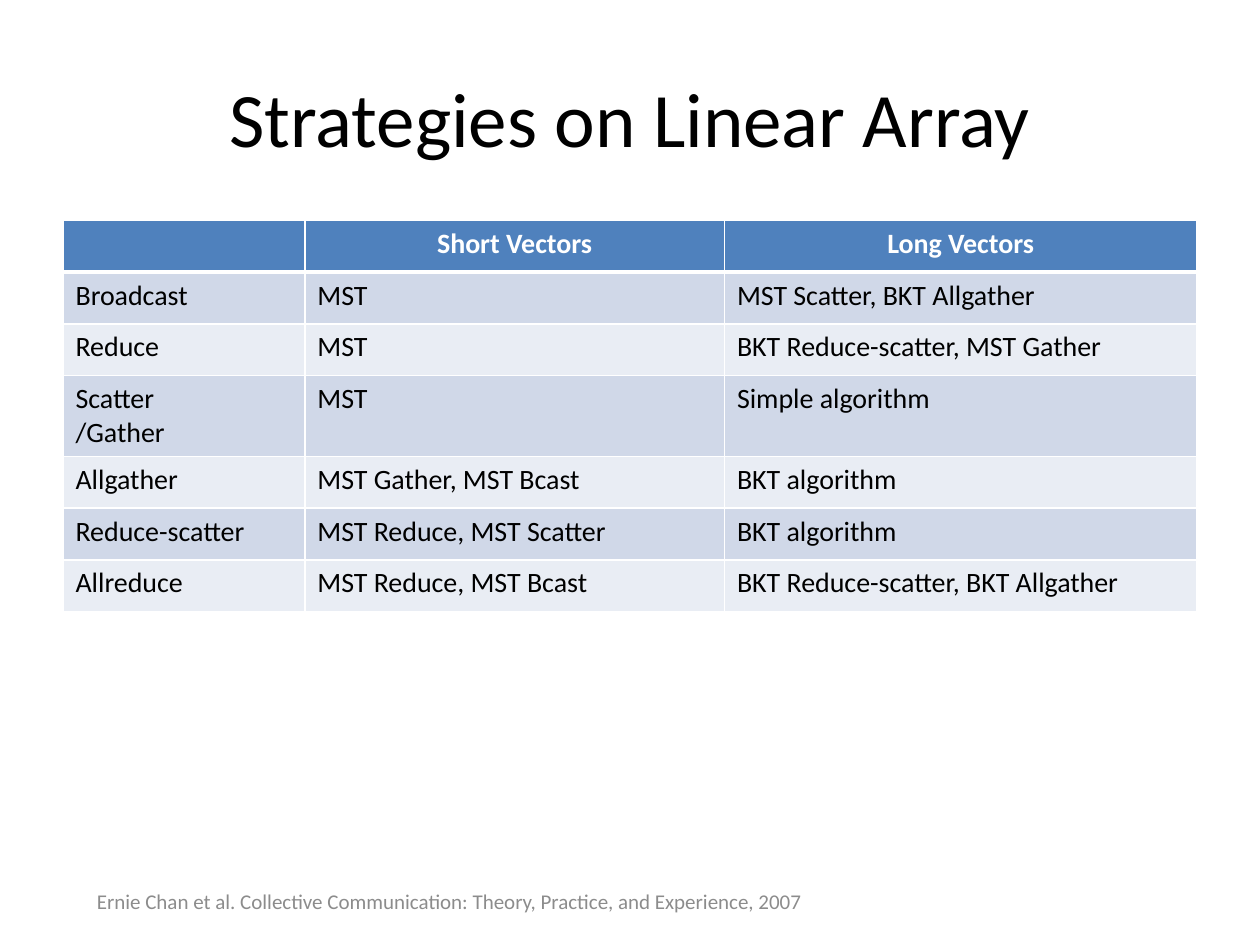
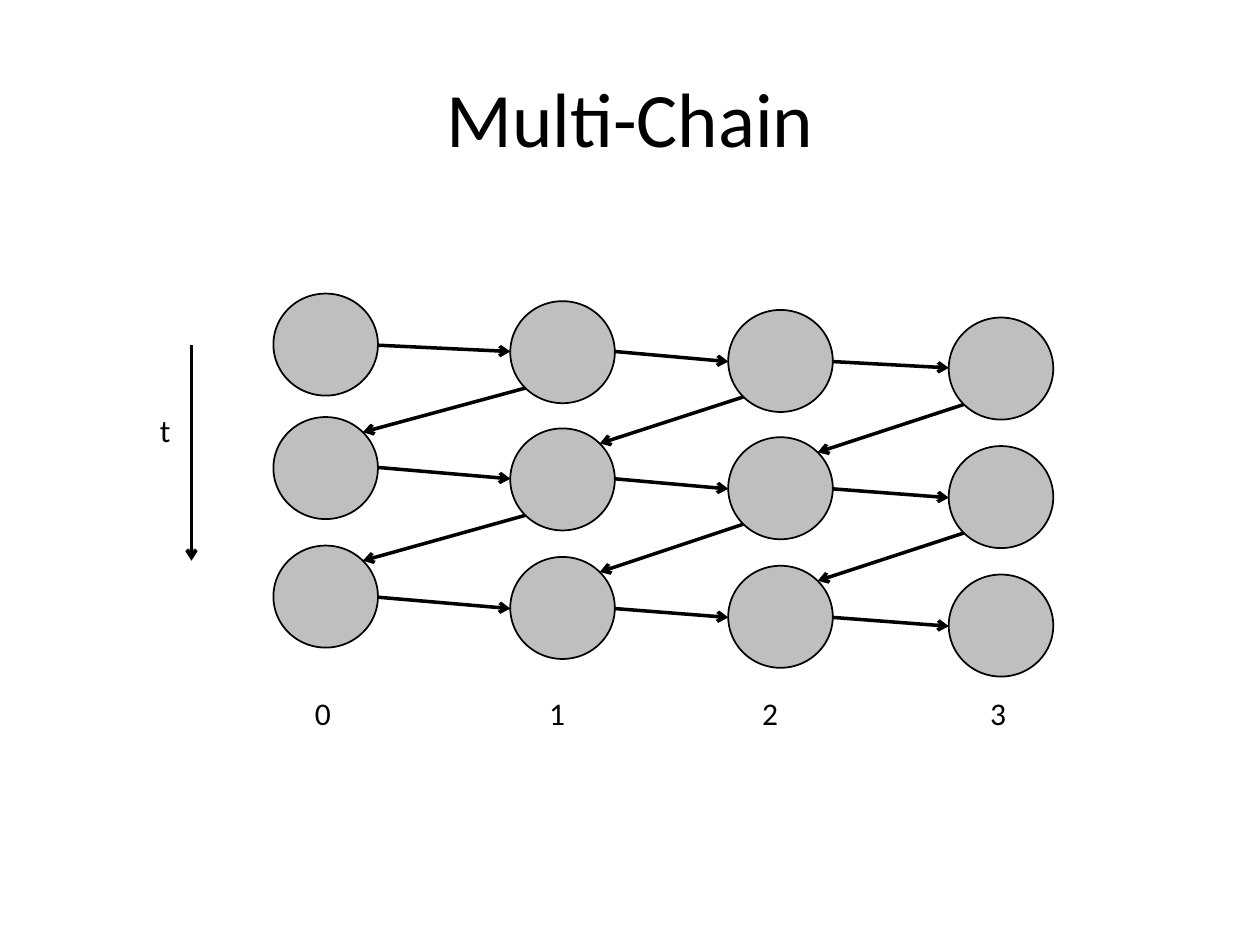
import pptx
import pptx.dml.color
import pptx.enum.shapes
import pptx.enum.text
import pptx.oxml
import pptx.util
from dataclasses import dataclass
from itertools import product
from lxml import etree

Inches, Pt = pptx.util.Inches, pptx.util.Pt
ALIGN = pptx.enum.text.PP_ALIGN
ANCHOR = pptx.enum.text.MSO_ANCHOR
SHAPE = pptx.enum.shapes.MSO_SHAPE
STRAIGHT = pptx.enum.shapes.MSO_CONNECTOR.STRAIGHT


@dataclass(frozen=True)
class Theme:
    font: str = "Calibri"
    ink: str = "000000"
    paper: str = "FFFFFF"
    header: str = "4F81BD"
    bands: tuple = ("D0D8E8", "E9EDF4")
    muted: str = "8C8C8C"
    node: str = "BFBFBF"
    title_size: int = 44
    label_size: int = 18
    cell_size: int = 16
    source_size: int = 12


THEME = Theme()
TITLE_BOX = (0.5, 0.3, 9, 1.25)


# Shared helpers
def rgb(value):
    return pptx.dml.color.RGBColor.from_string(value)


def inches(*lengths):
    return [Inches(round(length, 2)) for length in lengths]


def write(frame, text, size, color=THEME.ink, bold=False, align=ALIGN.LEFT):
    frame.text = text
    font_format = {"name": THEME.font, "size": Pt(size), "bold": bold}
    for paragraph in frame.paragraphs:
        paragraph.alignment = align
        for run in paragraph.runs:
            for key, value in font_format.items():
                setattr(run.font, key, value)
            run.font.color.rgb = rgb(color)


def add_label(shapes, box, text, size, color=THEME.ink, anchor=ANCHOR.TOP):
    frame = shapes.add_textbox(*inches(*box)).text_frame
    frame.word_wrap = True
    frame.vertical_anchor = anchor
    write(frame, text, size, color)


def add_arrow(shapes, start, end):
    arrow = shapes.add_connector(STRAIGHT, *inches(*start, *end))
    arrow.line.width = Pt(2)
    arrow.line.color.rgb = rgb(THEME.ink)
    pptx.oxml.ns  # namespace table used by qn
    head = etree.SubElement(arrow.line._get_or_add_ln(),
                            pptx.oxml.ns.qn("a:tailEnd"))
    head.set("type", "arrow")
    etree.SubElement(arrow._element.spPr, pptx.oxml.ns.qn("a:effectLst"))


def add_titled_slide(deck, title):
    slide = deck.slides.add_slide(deck.slide_layouts[5])
    heading = slide.shapes.title
    for key, value in zip(("left", "top", "width", "height"), inches(*TITLE_BOX)):
        setattr(heading, key, value)
    heading.text_frame.vertical_anchor = ANCHOR.MIDDLE
    write(heading.text_frame, title, THEME.title_size, align=ALIGN.CENTER)
    return slide


# Strategy table
STRATEGIES = [
    ("", "Short Vectors", "Long Vectors"),
    ("Broadcast", "MST", "MST Scatter, BKT Allgather"),
    ("Reduce", "MST", "BKT Reduce-scatter, MST Gather"),
    ("Scatter\n/Gather", "MST", "Simple algorithm"),
    ("Allgather", "MST Gather, MST Bcast", "BKT algorithm"),
    ("Reduce-scatter", "MST Reduce, MST Scatter", "BKT algorithm"),
    ("Allreduce", "MST Reduce, MST Bcast", "BKT Reduce-scatter, BKT Allgather"),
]


def set_borders(cell, widths):
    """Draw white borders; widths maps L, R, T, B to points."""
    properties = cell._tc.get_or_add_tcPr()
    for position, (side, width) in enumerate(widths.items()):
        border = etree.Element(pptx.oxml.ns.qn(f"a:ln{side}"), w=str(Pt(width)))
        fill = etree.SubElement(border, pptx.oxml.ns.qn("a:solidFill"))
        etree.SubElement(fill, pptx.oxml.ns.qn("a:srgbClr"), val=THEME.paper)
        properties.insert(position, border)


def add_strategy_table(slide, box, column_widths):
    table = slide.shapes.add_table(len(STRATEGIES), len(column_widths),
                                   *inches(*box)).table
    for column, width in zip(table.columns, column_widths):
        column.width = Inches(width)
    for row in table.rows:
        row.height = Inches(0.41)
    for r, strategy in enumerate(STRATEGIES):
        is_header = r == 0
        for c, text in enumerate(strategy):
            cell = table.cell(r, c)
            cell.fill.solid()
            cell.fill.fore_color.rgb = rgb(
                THEME.header if is_header else THEME.bands[(r - 1) % 2])
            write(cell.text_frame, text, THEME.cell_size,
                  THEME.paper if is_header else THEME.ink, is_header,
                  ALIGN.CENTER if is_header else ALIGN.LEFT)
            set_borders(cell, {"L": 1, "R": 1, "T": 3 if r == 1 else 1,
                               "B": 3 if is_header else 1})


def build_strategies(deck):
    slide = add_titled_slide(deck, "Strategies on Linear Array")
    add_strategy_table(slide, (0.5, 1.75, 9, 2.87), (1.92, 3.33, 3.75))
    add_label(slide.shapes, (0.67, 6.95, 8.83, 0.4),
              "Ernie Chan et al. Collective Communication: "
              "Theory, Practice, and Experience, 2007",
              THEME.source_size, THEME.muted, ANCHOR.MIDDLE)


# Chain diagram: all offsets are relative to the diagram's top-left corner
NODE_SIZE = (0.83, 0.81)
NODE_LEFTS = (1, 2.88, 4.61, 6.36)
STEP_TOPS = (0, 0.98, 2)
STEP_SLOPES = ((0, 0.06, 0.13, 0.19),) + ((0, 0.09, 0.16, 0.23),) * 2
LABEL_LEFTS = (1.23, 3.09, 4.78, 6.59)
NEAR, FAR = 0.15, 0.85  # where diagonals meet a circle, as shares of its box


def add_chain_diagram(slide, left, top):
    shapes = slide.shapes.add_group_shape().shapes
    width, height = NODE_SIZE
    steps, ranks = range(len(STEP_TOPS)), range(len(NODE_LEFTS))

    def node_point(step, rank, across, down):
        return (left + NODE_LEFTS[rank] + across * width,
                top + STEP_TOPS[step] + STEP_SLOPES[step][rank] + down * height)

    # Time axis
    add_arrow(shapes, (left + 0.35, top + 0.41), (left + 0.35, top + 2.12))
    add_label(shapes, (left, top + 0.88, 0.78, 0.4), "t", THEME.label_size)

    # Messages to the next rank, and back to the previous rank one step later
    for step, rank in product(steps, ranks[1:]):
        add_arrow(shapes, node_point(step, rank - 1, 1, 0.5),
                  node_point(step, rank, 0, 0.5))
        if step < steps[-1]:
            add_arrow(shapes, node_point(step, rank, NEAR, FAR),
                      node_point(step + 1, rank - 1, FAR, NEAR))

    # Nodes
    for step, rank in product(steps, ranks):
        node = shapes.add_shape(SHAPE.OVAL, *inches(
            *node_point(step, rank, 0, 0), width, height))
        node.shadow.inherit = False
        node.fill.solid()
        node.fill.fore_color.rgb = rgb(THEME.node)
        node.line.color.rgb = rgb(THEME.ink)
        node.line.width = Pt(1)

    # Rank numbers
    for rank, label_left in enumerate(LABEL_LEFTS):
        add_label(shapes, (left + label_left, top + 3.13, 0.78, 0.62),
                  str(rank), THEME.label_size)


def build_multi_chain(deck):
    slide = add_titled_slide(deck, "Multi-Chain")
    add_chain_diagram(slide, 1.17, 2.33)


def main():
    deck = pptx.Presentation()
    deck.slide_width, deck.slide_height = inches(10, 7.5)
    build_strategies(deck)
    build_multi_chain(deck)
    deck.save("out.pptx")


if __name__ == "__main__":
    main()
